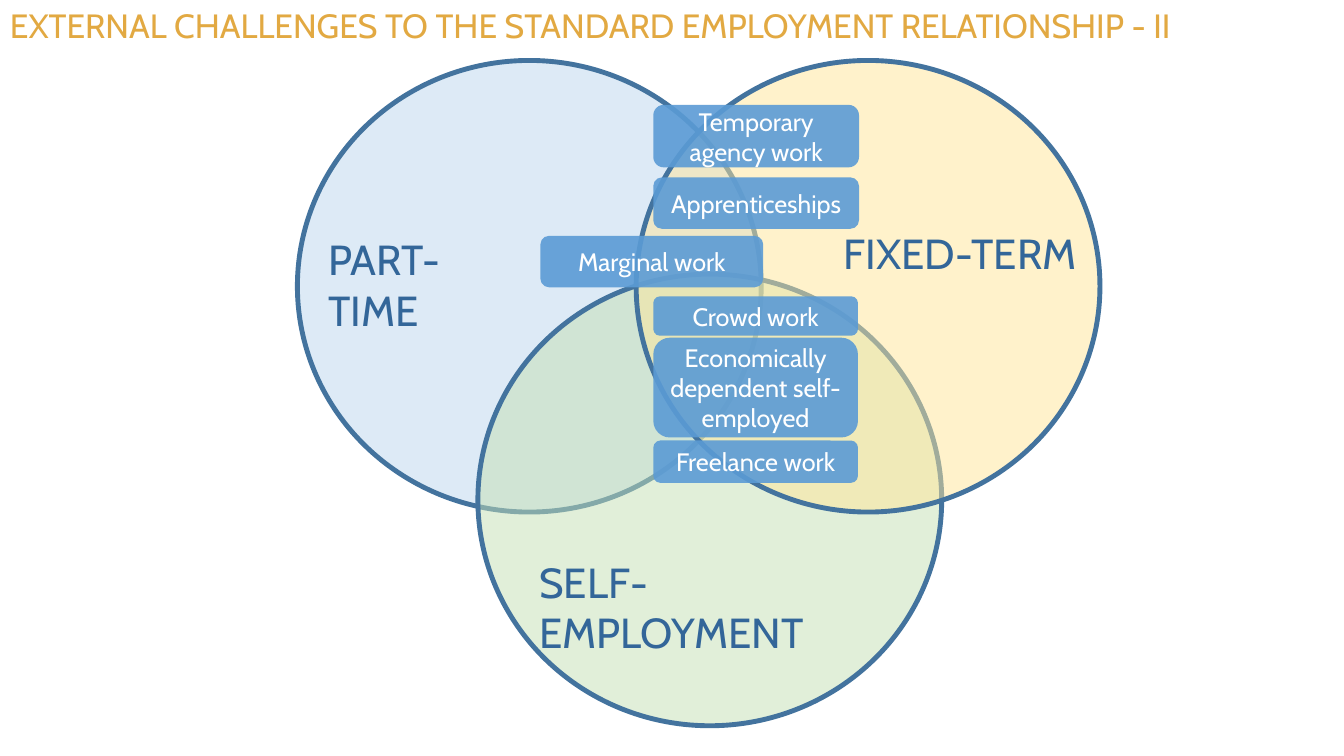
import pptx
import pptx.util
import pptx.dml.color
import pptx.enum.shapes
import pptx.enum.text
import pptx.oxml
import pptx.oxml.ns
from pptx.util import Inches

THEME = {
    "font": "Cabin",
    "title": {"size": 24, "color": "E2A942"},
    "label": {"size": 30, "color": "336699"},
    "box": {"size": 18, "color": "FFFFFF", "fill": "5B9BD5", "opacity": 90},
    "circle": {"line": "43739E", "width": 3.5, "opacity": 50},
    "part_time": "BDD7EE",
    "self_employment": "C5E0B4",
    "fixed_term": "FFE699",
}
SHAPES = pptx.enum.shapes.MSO_SHAPE
rgb = pptx.dml.color.RGBColor.from_string


def add_filled(kind, at, color, opacity):
    sp = slide.shapes.add_shape(kind, *map(Inches, at))
    sp.shadow.inherit = False
    sp.fill.solid()
    sp.fill.fore_color.rgb = rgb(color)
    clr = sp.fill._xPr.find(".//" + pptx.oxml.ns.qn("a:srgbClr"))
    alpha = pptx.oxml.parse_xml(
        f'<a:alpha {pptx.oxml.ns.nsdecls("a")} val="{opacity * 1000}"/>')
    clr.append(alpha)
    return sp


def write(sp, text, style, frame):
    tf = sp.text_frame
    for name, value in frame.items():
        setattr(tf, name, value)
    p = tf.paragraphs[0]
    r = p.add_run()
    r.text = text
    font = {"name": THEME["font"], "size": pptx.util.Pt(style["size"])}
    for name, value in font.items():
        setattr(r.font, name, value)
    r.font.color.rgb = rgb(style["color"])
    return p


prs = pptx.Presentation()
prs.slide_width, prs.slide_height = Inches(13.33), Inches(7.5)
slide = prs.slides.add_slide(prs.slide_layouts[6])

# Three overlapping circles
for left, top, name in [
    (2.95, 0.6, "part_time"),
    (4.74, 2.72, "self_employment"),
    (6.31, 0.6, "fixed_term"),
]:
    circle = THEME["circle"]
    sp = add_filled(SHAPES.OVAL, (left, top, 4.6, 4.48), THEME[name], circle["opacity"])
    sp.line.color.rgb = rgb(circle["line"])
    sp.line.width = pptx.util.Pt(circle["width"])

# Title and circle labels
plain = {"word_wrap": True, "vertical_anchor": pptx.enum.text.MSO_ANCHOR.TOP}
for text, at, style in [
    ("EXTERNAL CHALLENGES TO THE STANDARD EMPLOYMENT RELATIONSHIP - II",
     (0, 0, 12.64, 0.5), "title"),
    ("PART-TIME", (3.16, 2.27, 2.1, 0.61), "label"),
    ("FIXED-TERM", (8.27, 2.21, 2.55, 0.61), "label"),
    ("SELF-EMPLOYMENT", (5.25, 5.47, 3.79, 0.61), "label"),
]:
    sp = slide.shapes.add_textbox(*map(Inches, at))
    write(sp, text, THEME[style], plain)

# Forms of work in the overlaps
centred = {"word_wrap": True, "vertical_anchor": pptx.enum.text.MSO_ANCHOR.MIDDLE}
for text, left, top, width, height in [
    ("Temporary agency work", 6.48, 1.04, 2.04, 0.62),
    ("Apprenticeships", 6.48, 1.76, 2.04, 0.51),
    ("Marginal work", 5.36, 2.34, 2.21, 0.51),
    ("Crowd work", 6.48, 2.94, 2.03, 0.39),
    ("Economically dependent self-employed", 6.48, 3.35, 2.03, 0.99),
    ("Freelance work", 6.48, 4.37, 2.03, 0.42),
]:
    box = THEME["box"]
    sp = add_filled(SHAPES.ROUNDED_RECTANGLE, (left, top, width, height),
                    box["fill"], box["opacity"])
    sp.line.fill.background()
    p = write(sp, text, box, centred)
    p.alignment = pptx.enum.text.PP_ALIGN.CENTER

prs.save("out.pptx")
